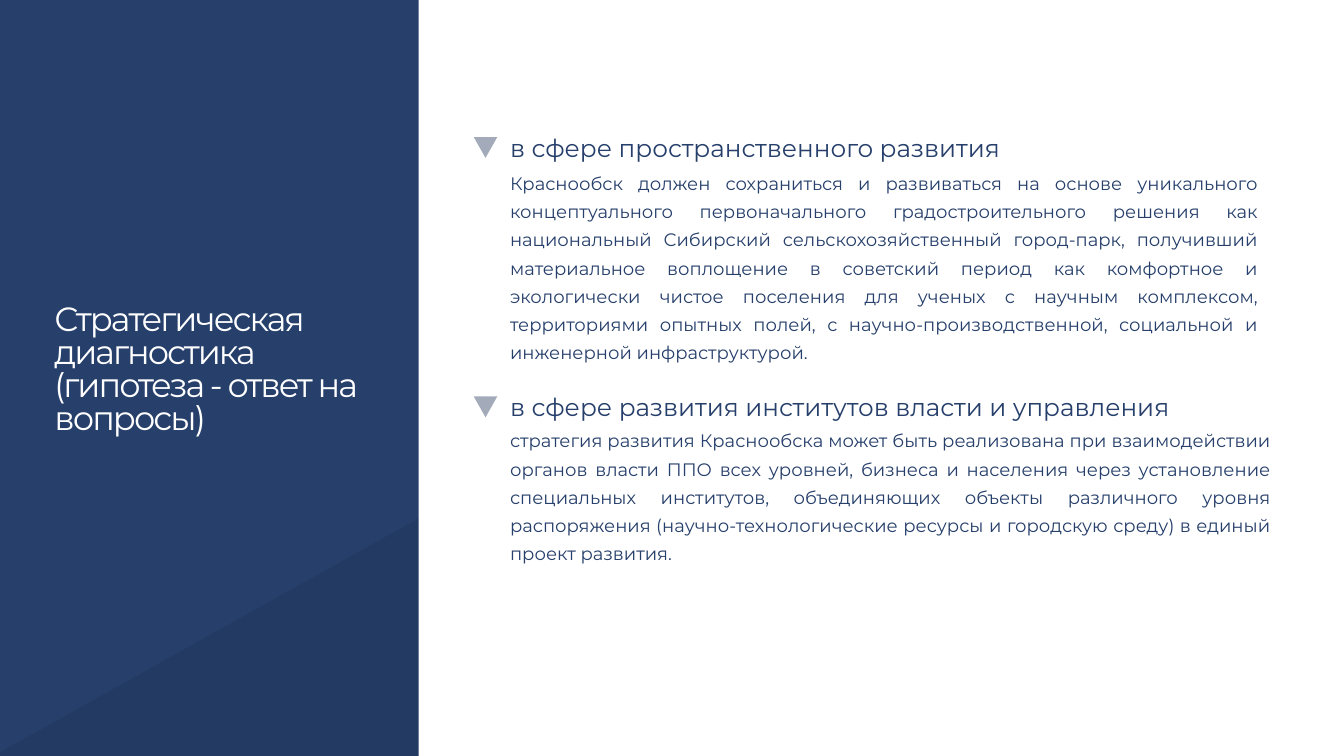
from lxml import etree
from pptx import Presentation
from pptx.dml.color import RGBColor
from pptx.enum.shapes import MSO_SHAPE
from pptx.enum.text import PP_ALIGN
from pptx.oxml.ns import qn
from pptx.util import Inches, Pt

NAVY = RGBColor(0x26, 0x3F, 0x6B)
MARKER = RGBColor(0x21, 0x35, 0x59)
BLACK = RGBColor(0, 0, 0)
WHITE = RGBColor(0xFF, 0xFF, 0xFF)
FONT = "Montserrat"
RECTANGLE = MSO_SHAPE.RECTANGLE
DOWN_TRIANGLE = MSO_SHAPE.FLOWCHART_MERGE
LEFT = PP_ALIGN.LEFT
JUSTIFY = PP_ALIGN.JUSTIFY

WIDTH, HEIGHT = 20, 11.25
SIDEBAR_WIDTH = 6.23
INDENT = 0.54

TITLE = ["Стратегическая диагностика", "(гипотеза - ответ на вопросы)"]
SECTIONS = [
    (
        (7.05, 1.84, 11.67, 3.96),
        0.63,
        "в сфере пространственного развития",
        "Краснообск должен сохраниться и развиваться на основе уникального "
        "концептуального первоначального градостроительного решения как "
        "национальный Сибирский сельскохозяйственный город-парк, получивший "
        "материальное воплощение в советский период как комфортное и "
        "экологически чистое поселения для ученых с научным комплексом, "
        "территориями опытных полей, с научно-производственной, социальной и "
        "инженерной инфраструктурой.",
    ),
    (
        (7.05, 5.7, 11.86, 3.09),
        0.6,
        "в сфере развития институтов власти и управления",
        "стратегия развития Краснообска может быть реализована при "
        "взаимодействии органов власти ППО всех уровней, бизнеса и населения "
        "через установление специальных институтов, объединяющих объекты "
        "различного уровня распоряжения (научно-технологические ресурсы и "
        "городскую среду) в единый проект развития.",
    ),
]


def add_shape(page, kind, box, color, opacity=100, rotation=0):
    shape = page.shapes.add_shape(kind, *map(Inches, box))
    shape.rotation = rotation
    shape.shadow.inherit = False
    shape.line.fill.background()
    shape.fill.solid()
    shape.fill.fore_color.rgb = color
    if opacity < 100:
        color_node = shape.fill._xPr.find(qn("a:solidFill"))[0]
        etree.SubElement(color_node, qn("a:alpha"), val=str(opacity * 1000))


def add_text(page, box, lines, size, leading, color, align, tracking=0):
    frame = page.shapes.add_textbox(*map(Inches, box)).text_frame
    frame.word_wrap = True
    frame.margin_left = frame.margin_right = 0
    frame.margin_top = frame.margin_bottom = 0
    for index, line in enumerate(lines):
        para = frame.paragraphs[0] if index == 0 else frame.add_paragraph()
        para.alignment = align
        para.line_spacing = Pt(leading)
        para.font.name = FONT
        para.font.size = Pt(size)
        para.font.color.rgb = color
        span = para.add_run()
        span.text = line
        if tracking:
            span.font._element.set("spc", str(round(tracking * 100)))


def add_sidebar(page, box):
    left, top, width, height = box
    shade_box = (left - 1.22, top + 4.76, 28.2, 10.48)
    add_shape(page, RECTANGLE, shade_box, BLACK, 7, 330.8)
    title_box = (left + 0.13 * width, top + 4.54, 0.84 * width, 2.96)
    add_text(page, title_box, TITLE, 36, 35.3, WHITE, LEFT, tracking=-2.1)


def add_section(page, box, body_offset, heading, body):
    left, top, width, height = box
    text_left, text_width = left + INDENT, width - INDENT
    add_shape(page, DOWN_TRIANGLE, (left, top + 0.2, 0.35, 0.31), MARKER, 41)
    heading_box = (text_left, top, text_width, 0.54)
    body_box = (text_left, top + body_offset, text_width, height - body_offset)
    add_text(page, heading_box, [heading], 26.5, 41.4, NAVY, JUSTIFY)
    add_text(page, body_box, [body], 19.3, 30.2, NAVY, JUSTIFY)


def main():
    deck = Presentation()
    deck.slide_width, deck.slide_height = Inches(WIDTH), Inches(HEIGHT)
    page = deck.slides.add_slide(deck.slide_layouts[6])
    page.background.fill.solid()
    page.background.fill.fore_color.rgb = NAVY
    add_sidebar(page, (0, 0, SIDEBAR_WIDTH, HEIGHT))
    content_box = (SIDEBAR_WIDTH, -0.74, 20.1, 12.42)
    add_shape(page, RECTANGLE, content_box, WHITE)
    for section in SECTIONS:
        add_section(page, *section)
    deck.save("out.pptx")


if __name__ == "__main__":
    main()
